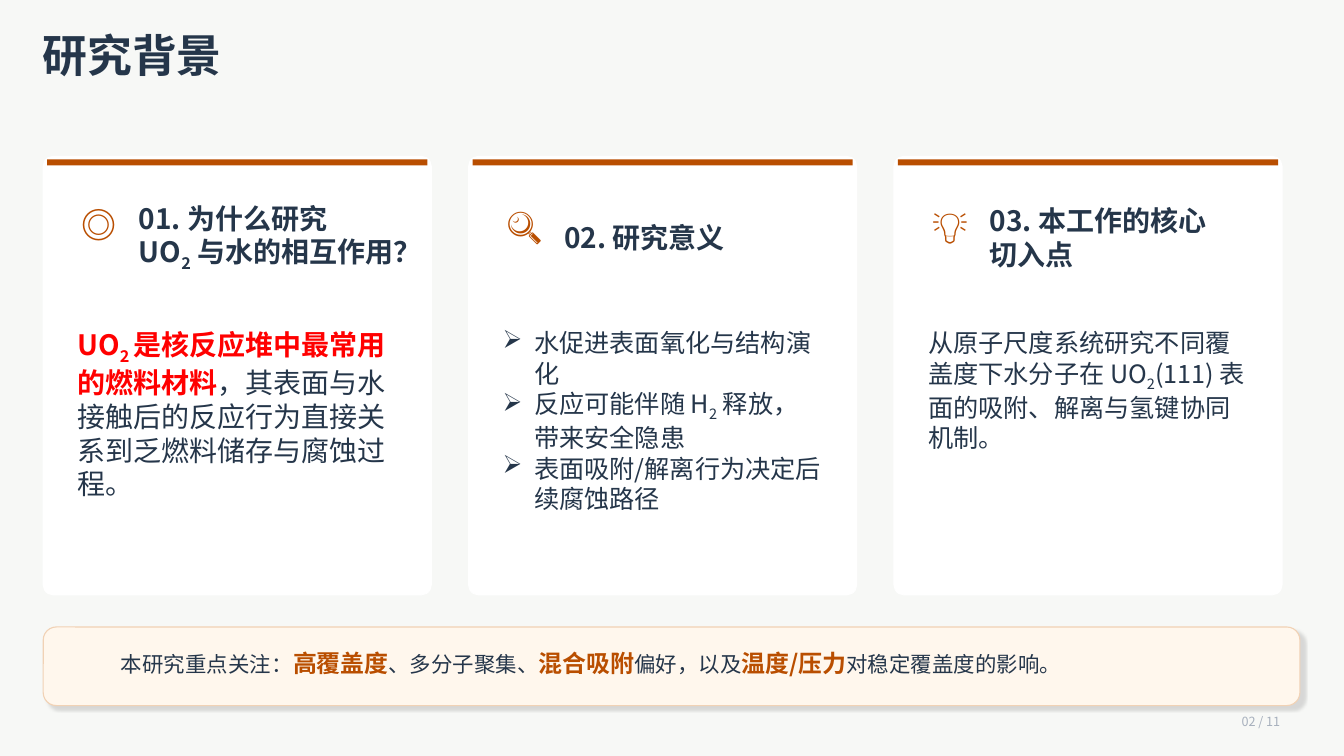
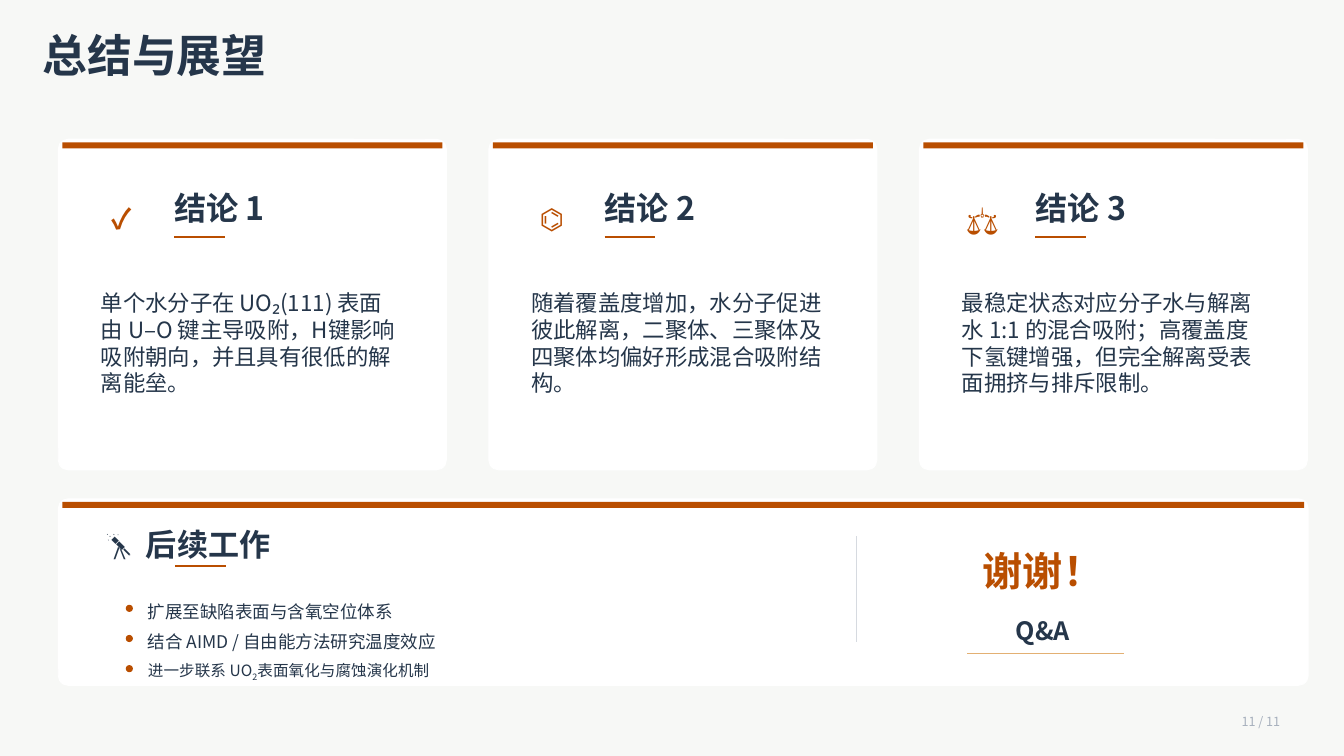
from lxml import etree
from pptx import Presentation
from pptx.dml.color import RGBColor
from pptx.enum.shapes import MSO_CONNECTOR, MSO_SHAPE
from pptx.enum.text import MSO_ANCHOR, PP_ALIGN
from pptx.oxml.ns import qn
from pptx.util import Cm, Pt

FONT = "Noto Sans CJK SC"
COLORS = {
    "paper": "F7F8F6", "white": "FFFFFF", "ink": "25364A", "accent": "B94E00",
    "alert": "FF0000", "cream": "FFF7ED", "cream_edge": "F1D2B5",
    "divider": "D6DAE0", "gold": "E3B073", "muted": "A7B0BD", "shadow": "000000",
}
SUB = {"sub": True}
ALERT = {"color": "alert", "bold": True}
KEYWORD = {"color": "accent", "bold": True, "size": 17.1}


def rgb(name):
    return RGBColor.from_string(COLORS[name])


# Text
def add_span(para, text, sub=False, color=None, bold=None, size=None):
    span = para.add_run()
    span.text = text
    if color:
        span.font.color.rgb = rgb(color)
    if bold is not None:
        span.font.bold = bold
    if size:
        span.font.size = Pt(size)
    if sub:
        span.font._element.set("baseline", "-25000")


def add_bullet(para, char, indent):
    props = para._p.get_or_add_pPr()
    props.set("marL", str(indent))
    props.set("indent", str(-indent))
    etree.SubElement(props, qn("a:buChar")).set("char", char)


def add_text(page, box, paras, size, color="ink", bold=False,
             align=PP_ALIGN.LEFT, anchor=MSO_ANCHOR.MIDDLE, bullet=None):
    """Each paragraph is a string or a list of strings and (text, style) pairs."""
    frame = page.shapes.add_textbox(*map(Cm, box)).text_frame
    frame.word_wrap = True
    frame.vertical_anchor = anchor
    frame.margin_left = frame.margin_right = frame.margin_top = frame.margin_bottom = 0
    for index, spans in enumerate(paras):
        para = frame.add_paragraph() if index else frame.paragraphs[0]
        para.alignment = align
        if bullet:
            add_bullet(para, bullet, Cm(0.79))
        para.font.name = FONT
        para.font.size = Pt(size)
        para.font.bold = bold
        para.font.color.rgb = rgb(color)
        etree.SubElement(para.font._element, qn("a:ea")).set("typeface", FONT)
        for item in [spans] if isinstance(spans, str) else spans:
            text, style = (item, {}) if isinstance(item, str) else item
            add_span(para, text, **style)


# Shapes
def add_block(page, kind, box, fill, edge=None, edge_width=0.7, radius=None):
    shape = page.shapes.add_shape(kind, *map(Cm, box))
    shape.shadow.inherit = False
    shape.fill.solid()
    shape.fill.fore_color.rgb = rgb(fill)
    if edge:
        shape.line.color.rgb = rgb(edge)
        shape.line.width = Pt(edge_width)
    else:
        shape.line.fill.background()
    if radius:
        shape.adjustments[0] = radius / min(box[2:])
    return shape


def add_line(page, start, end, color="accent", width=1.5):
    line = page.shapes.add_connector(MSO_CONNECTOR.STRAIGHT, *map(Cm, start + end))
    line.line.color.rgb = rgb(color)
    line.line.width = Pt(width)
    etree.SubElement(line._element.spPr, qn("a:effectLst"))


def add_drop_shadow(shape):
    effects = shape._element.spPr.find(qn("a:effectLst"))
    shadow = etree.SubElement(effects, qn("a:outerShdw"), blurRad=str(Pt(2)),
                              dist=str(Pt(4)), dir="2700000", algn="tl", rotWithShape="0")
    color = etree.SubElement(shadow, qn("a:srgbClr"), val=COLORS["shadow"])
    etree.SubElement(color, qn("a:alpha"), val="12000")


def add_card(page, box):
    """White rounded card with an accent bar along its top."""
    left, top, width, _ = box
    add_block(page, MSO_SHAPE.ROUNDED_RECTANGLE, box, "white", "white", radius=0.25)
    add_block(page, MSO_SHAPE.RECTANGLE, (left + 0.1, top + 0.08, width - 0.2, 0.15), "accent")


# Shared page frame
def add_page(deck, title, number):
    page = deck.slides.add_slide(deck.slide_layouts[6])
    page.background.fill.solid()
    page.background.fill.fore_color.rgb = rgb("paper")
    add_text(page, (1.07, 0.64, 30.99, 1.47), [title], 32, bold=True)
    add_text(page, (29.72, 17.91, 2.54, 0.56), [f"{number:02d} / 11"], 9, "muted",
             align=PP_ALIGN.RIGHT)
    return page


# Background slide
def add_topic(page, box, icon, title, body, size, bullet=None):
    left, top, _, _ = box
    add_card(page, box)
    add_text(page, (left + 0.71, top + 1.02, 1.4, 1.4), [icon], 25, "accent", True,
             PP_ALIGN.CENTER)
    add_text(page, (left + 2.41, top + 0.89, 6.6, 2.29), title, 20, bold=True)
    add_text(page, (left + 0.86, top + 4.32, 8.08, 5.61), body, size,
             anchor=MSO_ANCHOR.TOP, bullet=bullet)


def add_focus_note(page, box):
    left, top, _, _ = box
    note = add_block(page, MSO_SHAPE.ROUNDED_RECTANGLE, box, "cream", "cream_edge", 0.8, 0.33)
    add_drop_shadow(note)
    add_text(page, (left + 1.96, top + 0.53, 27.94, 0.76), [[
        "本研究重点关注：", ("高覆盖度", KEYWORD), "、多分子聚集、", ("混合吸附", KEYWORD),
        "偏好，以及", ("温度/压力", KEYWORD), "对稳定覆盖度的影响。"]], 15.3)


def build_background(deck):
    page = add_page(deck, "研究背景", 2)
    topics = [
        ("◎", ["01. 为什么研究", ["UO", ("2", SUB), " 与水的相互作用？"]],
         [[("UO", ALERT), ("2 ", {**ALERT, **SUB}), ("是核反应堆中最常用的燃料材料", ALERT),
           "，其表面与水接触后的反应行为直接关系到乏燃料储存与腐蚀过程。"]], 20),
        ("🔍", ["02. 研究意义"],
         ["水促进表面氧化与结构演化",
          ["反应可能伴随 H", ("2", SUB), " 释放，带来安全隐患"],
          "表面吸附/解离行为决定后续腐蚀路径"], 18, "➢"),
        ("💡", ["03. 本工作的核心", "切入点"],
         [["从原子尺度系统研究不同覆盖度下水分子在 UO", ("2", SUB),
           "(111) 表面的吸附、解离与氢键协同机制。"]], 18),
    ]
    for column, topic in enumerate(topics):
        add_topic(page, (1.09 + 10.72 * column, 3.94, 9.78, 11.05), *topic)
    add_focus_note(page, (1.09, 15.8, 31.67, 1.98))


# Summary slide
def add_conclusion(page, box, icon, title, body):
    left, top, _, _ = box
    add_card(page, box)
    add_text(page, (left + 0.89, top + 1.32, 1.4, 1.35), [icon], 20, "accent", True,
             PP_ALIGN.CENTER)
    add_text(page, (left + 2.92, top + 1.27, 3.56, 0.89), [title], 23, bold=True)
    add_line(page, (left + 2.92, top + 2.46), (left + 4.19, top + 2.46))
    add_text(page, (left + 1.07, top + 3.73, 7.62, 2.79), [body], 16)


def add_outlook(page, box):
    left, top, _, _ = box
    add_card(page, box)
    # Future work
    add_text(page, (left + 1.19, top + 0.69, 1, 0.89), ["🔭"], 22.2, bold=True)
    add_text(page, (left + 2.21, top + 0.69, 5, 0.89), ["后续工作"], 22.2, bold=True)
    add_line(page, (left + 2.95, top + 1.7), (left + 4.22, top + 1.7))
    tasks = [
        ("扩展至缺陷表面与含氧空位体系", 12.5),
        ("结合 AIMD / 自由能方法研究温度效应", 12.5),
        (["进一步联系 UO", ("2", SUB), "表面氧化与腐蚀演化机制"], 11.1),
    ]
    for row, (task, size) in enumerate(tasks):
        y = top + 2.57 + 0.76 * row
        add_block(page, MSO_SHAPE.OVAL, (left + 1.7, y + 0.1, 0.18, 0.18), "accent")
        add_text(page, (left + 2.26, y, 13.67, 0.51), [task], size, anchor=MSO_ANCHOR.TOP)
    # Closing words
    add_line(page, (left + 20.12, top + 0.94), (left + 20.12, top + 3.61), "divider", 0.8)
    add_text(page, (left + 22.53, top + 1.24, 4.57, 1.14), ["谢谢！"], 28.7, "accent", True,
             PP_ALIGN.CENTER)
    add_text(page, (left + 23.29, top + 2.97, 3.05, 0.71), ["Q&A"], 18, bold=True,
             align=PP_ALIGN.CENTER)
    add_line(page, (left + 22.91, top + 3.89), (left + 26.85, top + 3.89), "gold", 0.8)


def build_summary(deck):
    page = add_page(deck, "总结与展望", 11)
    conclusions = [
        ("✓", "单个水分子在 UO₂(111) 表面由 U–O 键主导吸附，H键影响吸附朝向，并且具有很低的解离能垒。"),
        ("⌬", "随着覆盖度增加，水分子促进彼此解离，二聚体、三聚体及四聚体均偏好形成混合吸附结构。"),
        ("⚖", "最稳定状态对应分子水与解离水 1:1 的混合吸附；高覆盖度下氢键增强，但完全解离受表面拥挤与排斥限制。"),
    ]
    for column, (icon, body) in enumerate(conclusions):
        add_conclusion(page, (1.47 + 10.85 * column, 3.51, 9.78, 8.33),
                       icon, f"结论 {column + 1}", body)
    add_outlook(page, (1.47, 12.57, 31.5, 4.7))


def main():
    deck = Presentation()
    deck.slide_width, deck.slide_height = Cm(33.87), Cm(19.05)
    build_background(deck)
    build_summary(deck)
    deck.save("out.pptx")


if __name__ == "__main__":
    main()
